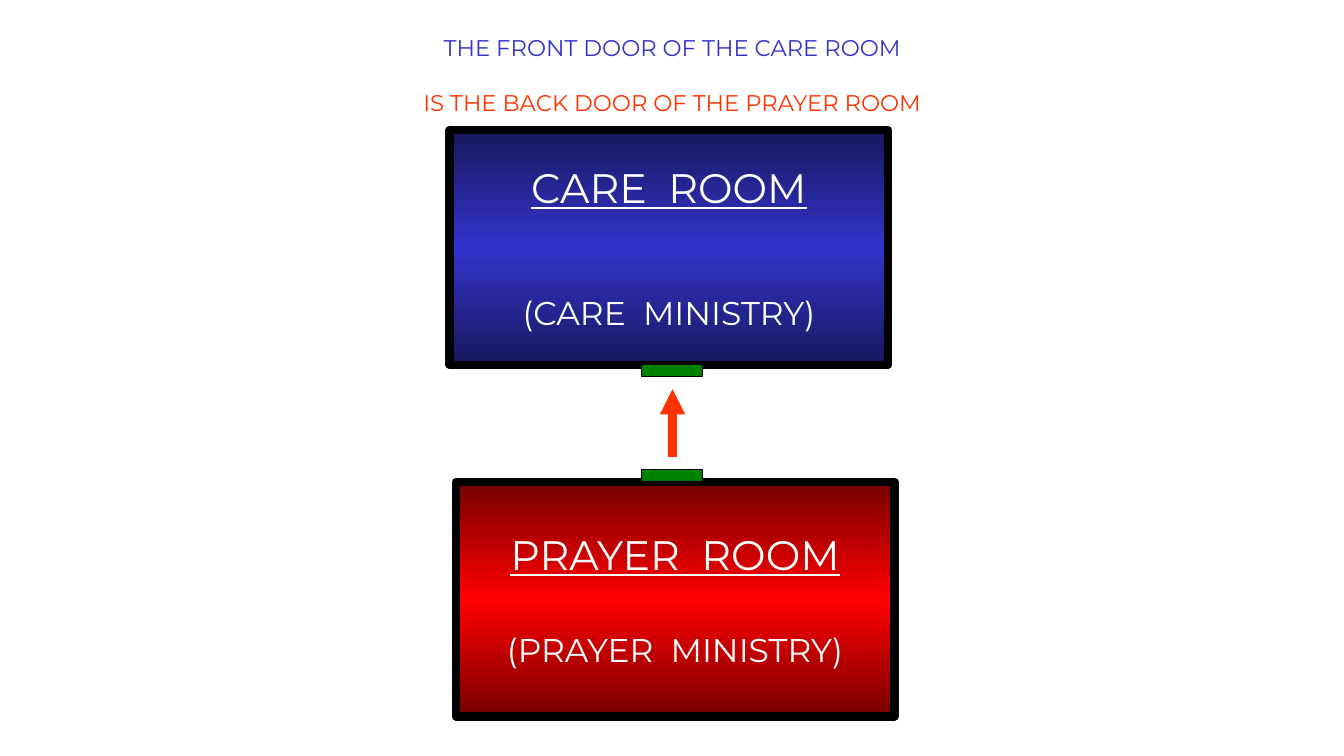
from copy import deepcopy
from dataclasses import dataclass

from lxml import etree
from pptx import Presentation
from pptx import util as u
from pptx.dml.color import RGBColor
from pptx.enum import shapes, text
from pptx.oxml.ns import qn


@dataclass(frozen=True)
class Theme:
    font: str = "Montserrat"
    blue: str = "3333CC"
    navy: str = "18185E"
    red: str = "FF0000"
    maroon: str = "760000"
    orange: str = "FF3300"
    green: str = "008000"
    black: str = "000000"
    white: str = "FFFFFF"
    name_size: float = 29.4
    role_size: float = 23.5
    head_size: float = 16.2
    thick: float = 6
    thin: float = 0.75


@dataclass(frozen=True)
class Line:
    words: str
    size: float
    color: str
    gap: float = 0
    under: bool = False


@dataclass(frozen=True)
class Room:
    left: float
    top: float
    edge: str
    core: str
    name: str
    role: str
    gap: float


THEME = Theme()
ROOM_SIZE = (4.35, 2.33)
DOOR_SIZE = (0.61, 0.12)
DOOR_LEFT = 6.36
DOOR_TOPS = (4.66, 3.62)

ROOMS = (
    Room(4.46, 1.29, THEME.navy, THEME.blue,
         "CARE  ROOM", "(CARE  MINISTRY)", 57.5),
    Room(4.52, 4.78, THEME.maroon, THEME.red,
         "PRAYER  ROOM", "(PRAYER  MINISTRY)", 35.8),
)
HEADING = (
    Line("THE FRONT DOOR OF THE CARE ROOM", THEME.head_size, THEME.blue),
    Line("IS THE BACK DOOR OF THE PRAYER ROOM", THEME.head_size,
         THEME.orange, gap=19.75),
)


def rgb(color: str) -> RGBColor:
    return RGBColor.from_string(color)


def write(frame, lines: tuple[Line, ...], wrap: bool) -> None:
    frame.word_wrap = wrap
    frame.margin_left = frame.margin_right = u.Inches(0.07)
    frame.margin_top = frame.margin_bottom = u.Inches(0.04)
    frame.text = "\n".join(line.words for line in lines)
    for para, line in zip(frame.paragraphs, lines):
        para.alignment = text.PP_ALIGN.CENTER
        para.space_before = u.Pt(line.gap)
        font = para.runs[0].font
        font.name = THEME.font
        font.size = u.Pt(line.size)
        font.color.rgb = rgb(line.color)
        font.underline = line.under


def add_box(slide, left: float, top: float, size: tuple[float, float],
            weight: float):
    box = slide.shapes.add_shape(
        shapes.MSO_SHAPE.RECTANGLE, u.Inches(left), u.Inches(top),
        *map(u.Inches, size))
    box.shadow.inherit = False
    box.line.color.rgb = rgb(THEME.black)
    box.line.width = u.Pt(weight)
    return box


def shade(box, edge: str, core: str) -> None:
    """Fill from edge colour to core colour and back, top to bottom."""
    fill = box.fill
    fill.gradient()
    fill.gradient_angle = 90
    first = box.element.spPr.find(".//" + qn("a:gs"))
    first.addnext(deepcopy(first))
    for stop, color, place in zip(fill.gradient_stops,
                                  (edge, core, edge), (0, 0.5, 1)):
        stop.color.rgb = rgb(color)
        stop.position = place


def add_room(slide, room: Room) -> None:
    box = add_box(slide, room.left, room.top, ROOM_SIZE, THEME.thick)
    shade(box, room.edge, room.core)
    box.text_frame.vertical_anchor = text.MSO_ANCHOR.MIDDLE
    write(box.text_frame, (
        Line(room.name, THEME.name_size, THEME.white, under=True),
        Line(room.role, THEME.role_size, THEME.white, gap=room.gap),
    ), wrap=False)


def add_door(slide, top: float) -> None:
    door = add_box(slide, DOOR_LEFT, top, DOOR_SIZE, THEME.thin)
    door.fill.solid()
    door.fill.fore_color.rgb = rgb(THEME.green)


def add_arrow(slide) -> None:
    arrow = slide.shapes.add_connector(
        shapes.MSO_CONNECTOR.STRAIGHT,
        *map(u.Inches, (6.67, 4.53, 6.67, 3.86)))
    arrow.line.color.rgb = rgb(THEME.orange)
    arrow.line.width = u.Pt(THEME.thick)
    props = arrow.element.spPr
    etree.SubElement(props.find(qn("a:ln")), qn("a:tailEnd"), type="triangle")
    etree.SubElement(props, qn("a:effectLst"))


def add_heading(slide) -> None:
    box = slide.shapes.add_textbox(*map(u.Inches, (3.91, 0.3, 5.51, 0.89)))
    write(box.text_frame, HEADING, wrap=True)


def main() -> None:
    deck = Presentation()
    deck.slide_width, deck.slide_height = u.Inches(13.33), u.Inches(7.5)
    slide = deck.slides.add_slide(deck.slide_layouts[6])
    for room in ROOMS:
        add_room(slide, room)
    add_arrow(slide)
    for top in DOOR_TOPS:
        add_door(slide, top)
    add_heading(slide)
    deck.save("out.pptx")


if __name__ == "__main__":
    main()
